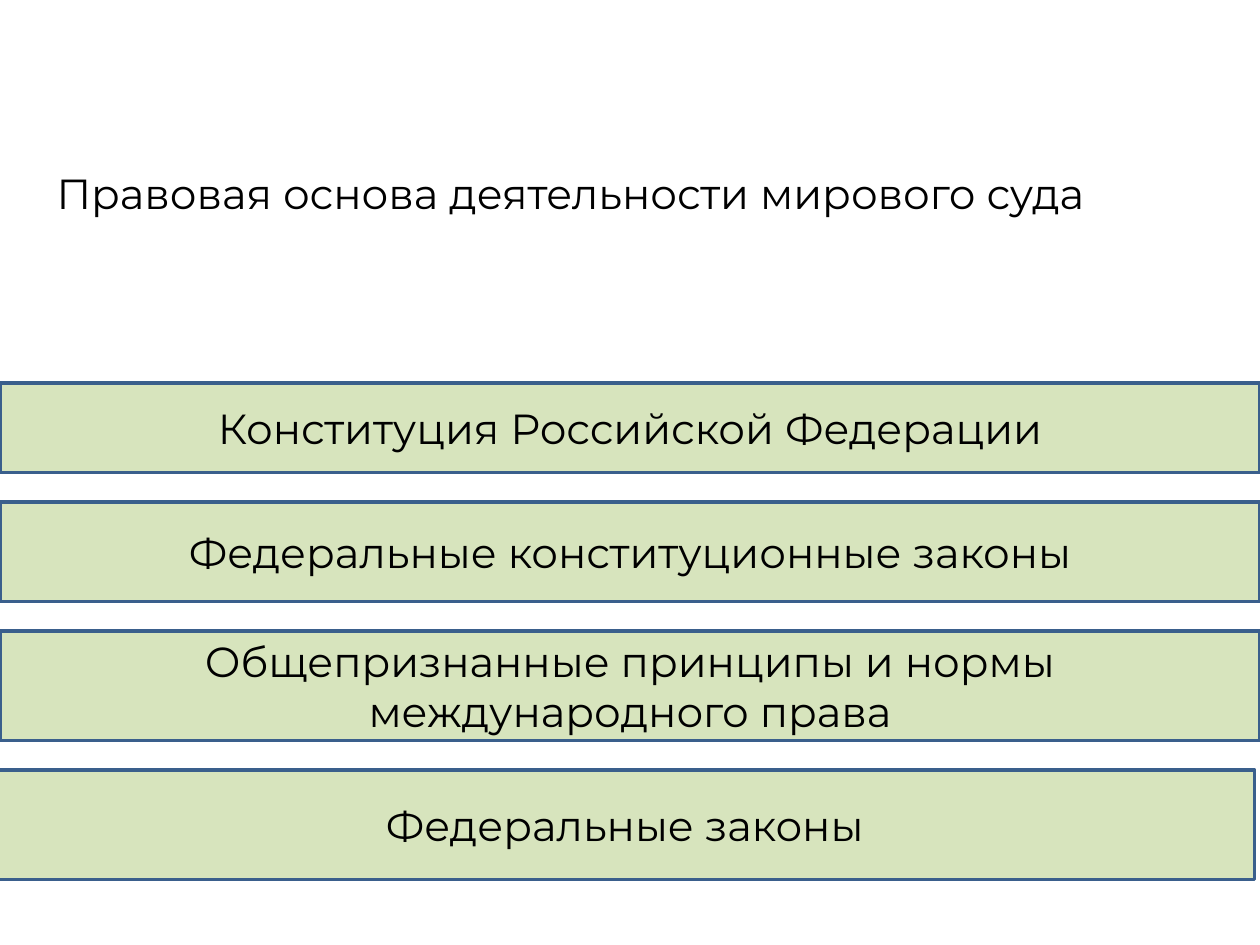
from dataclasses import dataclass

from pptx import Presentation
from pptx.dml.color import RGBColor
from pptx.enum.shapes import MSO_SHAPE
from pptx.enum.text import MSO_ANCHOR, MSO_AUTO_SIZE, PP_ALIGN
from pptx.slide import Slide
from pptx.text.text import TextFrame
from pptx.util import Pt

RECTANGLE = MSO_SHAPE.RECTANGLE
MIDDLE = MSO_ANCHOR.MIDDLE
LEFT, CENTER = PP_ALIGN.LEFT, PP_ALIGN.CENTER
FIT_SHAPE = MSO_AUTO_SIZE.SHAPE_TO_FIT_TEXT

COLORS = {"text": "000000", "bar": "D7E4BD", "border": "3A5F8C"}
FONT = "Montserrat"
FONT_SIZE = 24
SLIDE_WIDTH, SLIDE_HEIGHT = 720, 540
FIRST_BAR_TOP = 219
BAR_GAP = 16.8


@dataclass
class Bar:
    text: str
    height: float
    left: float = 0


TITLE = "Правовая основа деятельности мирового суда"
BARS = [
    Bar("Конституция Российской Федерации", 51),
    Bar("Федеральные конституционные законы", 57),
    Bar("Общепризнанные принципы и нормы международного права", 62.6),
    Bar("Федеральные законы", 62.6, left=-3),
]


def color(name: str) -> RGBColor:
    return RGBColor.from_string(COLORS[name])


def write_text(frame: TextFrame, text: str, alignment: PP_ALIGN) -> None:
    frame.word_wrap = True
    paragraph = frame.paragraphs[0]
    paragraph.alignment = alignment
    run = paragraph.add_run()
    run.text = text
    run.font.name = FONT
    run.font.size = Pt(FONT_SIZE)
    run.font.color.rgb = color("text")


def add_title(slide: Slide, text: str) -> None:
    shape = slide.shapes.add_textbox(Pt(25.2), Pt(92.2), Pt(669), Pt(36))
    write_text(shape.text_frame, text, LEFT)
    shape.text_frame.auto_size = FIT_SHAPE


def add_bar(slide: Slide, bar: Bar, top: float) -> None:
    shape = slide.shapes.add_shape(
        RECTANGLE, Pt(bar.left), Pt(top), Pt(SLIDE_WIDTH), Pt(bar.height)
    )
    shape.shadow.inherit = False
    shape.fill.solid()
    shape.fill.fore_color.rgb = color("bar")
    shape.line.color.rgb = color("border")
    shape.line.width = Pt(2)
    shape.text_frame.vertical_anchor = MIDDLE
    write_text(shape.text_frame, bar.text, CENTER)


def main() -> None:
    presentation = Presentation()
    presentation.slide_width = Pt(SLIDE_WIDTH)
    presentation.slide_height = Pt(SLIDE_HEIGHT)
    slide = presentation.slides.add_slide(presentation.slide_layouts[6])

    # Heading
    add_title(slide, TITLE)

    # Stack of legal sources, evenly spaced
    top = FIRST_BAR_TOP
    for bar in BARS:
        add_bar(slide, bar, top)
        top += bar.height + BAR_GAP

    presentation.save("out.pptx")


if __name__ == "__main__":
    main()
